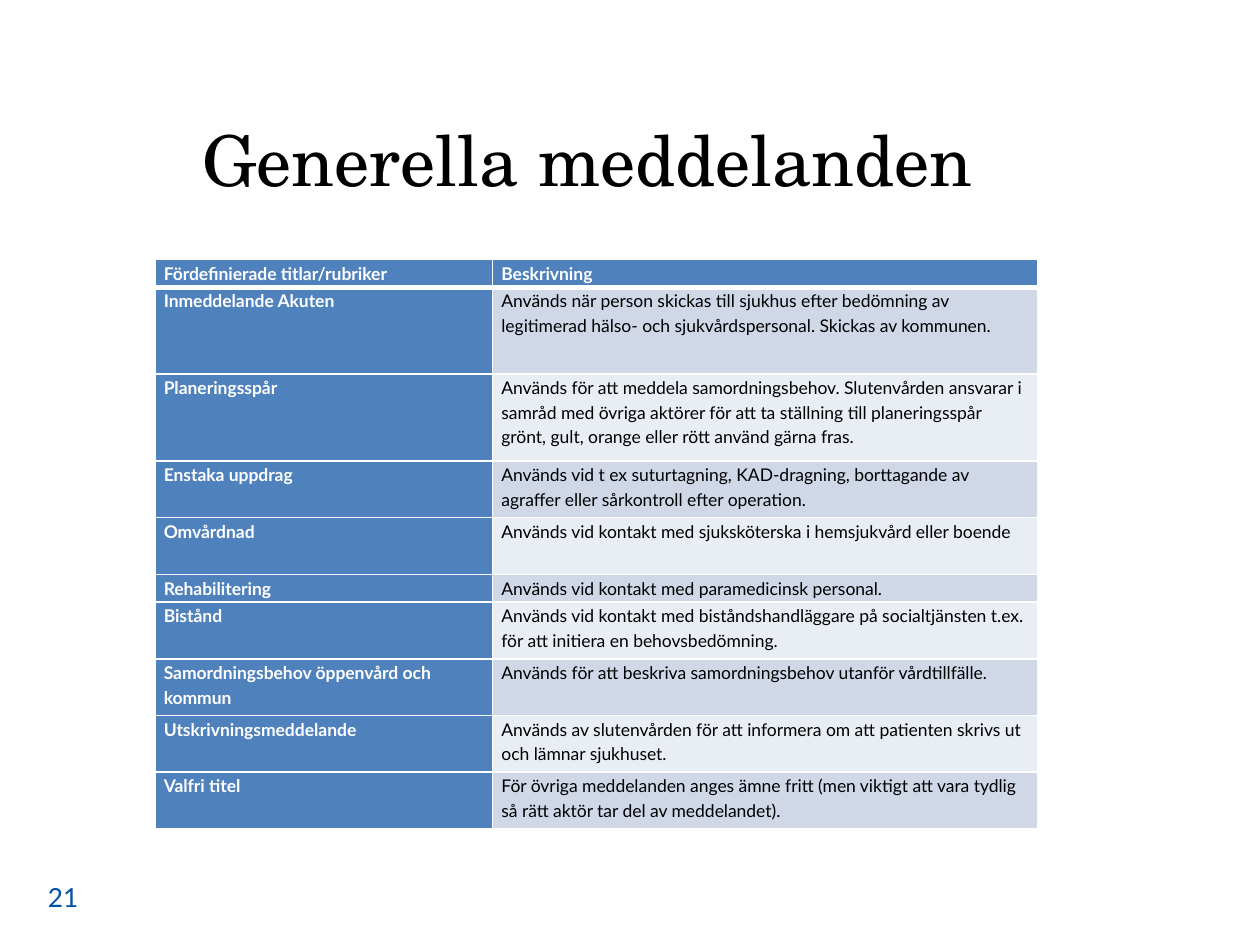
from lxml import etree
from pptx import Presentation
from pptx.dml.color import RGBColor
from pptx.enum.text import MSO_ANCHOR, PP_ALIGN
from pptx.oxml.ns import qn
from pptx.util import Inches, Pt

TOP = MSO_ANCHOR.TOP
MIDDLE = MSO_ANCHOR.MIDDLE
BOTTOM = MSO_ANCHOR.BOTTOM
LEFT = PP_ALIGN.LEFT
RIGHT = PP_ALIGN.RIGHT

HEADER_BLUE = "4F81BD"
BANDS = ["E9EDF4", "D0D8E8"]
WHITE = "FFFFFF"
BLACK = "000000"

ROWS = [
    (0.22, "Fördefinierade titlar/rubriker", "Beskrivning"),
    (0.69, "Inmeddelande Akuten",
     "Används när person skickas till sjukhus efter bedömning av legitimerad "
     "hälso- och sjukvårdspersonal. Skickas av kommunen."),
    (0.69, "Planeringsspår",
     "Används för att meddela samordningsbehov. Slutenvården ansvarar i samråd "
     "med övriga aktörer för att ta ställning till planeringsspår grönt, gult, "
     "orange eller rött använd gärna fras."),
    (0.45, "Enstaka uppdrag",
     "Används vid t ex suturtagning, KAD-dragning, borttagande av agraffer "
     "eller sårkontroll efter operation."),
    (0.45, "Omvårdnad",
     "Används vid kontakt med sjuksköterska i hemsjukvård eller boende"),
    (0.22, "Rehabilitering", "Används vid kontakt med paramedicinsk personal."),
    (0.45, "Bistånd",
     "Används vid kontakt med biståndshandläggare på socialtjänsten t.ex. för "
     "att initiera en behovsbedömning."),
    (0.45, "Samordningsbehov öppenvård och kommun",
     "Används för att beskriva samordningsbehov utanför vårdtillfälle."),
    (0.45, "Utskrivningsmeddelande",
     "Används av slutenvården för att informera om att patienten skrivs ut och "
     "lämnar sjukhuset."),
    (0.45, "Valfri titel",
     "För övriga meddelanden anges ämne fritt (men viktigt att vara tydlig så "
     "rätt aktör tar del av meddelandet)."),
]


def color(value):
    return RGBColor.from_string(value)


def write(frame, text, *, size, hue, font="Lato", bold=False, align=LEFT,
          anchor=TOP, line=None, after=None):
    frame.word_wrap = True
    frame.vertical_anchor = anchor
    paragraph = frame.paragraphs[0]
    paragraph.alignment = align
    paragraph.line_spacing = line
    paragraph.space_after = after
    run = paragraph.add_run()
    run.text = text
    run.font.name = font
    run.font.size = Pt(size)
    run.font.bold = bold
    run.font.color.rgb = color(hue)


presentation = Presentation()
presentation.slide_width = Inches(10)
presentation.slide_height = Inches(7.5)
slide = presentation.slides.add_slide(presentation.slide_layouts[6])

table = slide.shapes.add_table(
    len(ROWS), 2, Inches(1.23), Inches(2.06), Inches(7), Inches(4.54)).table
table.horz_banding = False
table.columns[0].width = Inches(2.68)
table.columns[1].width = Inches(4.33)

for row_index, (height, *texts) in enumerate(ROWS):
    table.rows[row_index].height = Inches(height)
    for column_index, text in enumerate(texts):
        cell = table.cell(row_index, column_index)
        heading = row_index == 0 or column_index == 0
        cell.margin_left = cell.margin_right = Inches(0.07)
        cell.margin_top = cell.margin_bottom = 0
        write(cell.text_frame, text, size=10, hue=WHITE if heading else BLACK,
              bold=heading, line=Pt(14), after=Pt(6))
        properties = cell._tc.get_or_add_tcPr()
        for side in ("lnL", "lnR", "lnT", "lnB"):
            thick = (row_index, side) in [(0, "lnB"), (1, "lnT")]
            border = etree.SubElement(
                properties, qn(f"a:{side}"), w=str(Pt(3 if thick else 1)))
            fill = etree.SubElement(border, qn("a:solidFill"))
            etree.SubElement(fill, qn("a:srgbClr"), val=WHITE)
        cell.fill.solid()
        cell.fill.fore_color.rgb = color(
            HEADER_BLUE if heading else BANDS[row_index % 2])

title = slide.shapes.add_textbox(
    Inches(1.51), Inches(0.57), Inches(7.76), Inches(1.38))
write(title.text_frame, "Generella meddelanden", size=40, hue=BLACK,
      font="TeX Gyre Schola", anchor=MIDDLE)

slide_number = slide.shapes.add_textbox(
    Inches(0.17), Inches(6.89), Inches(0.55), Inches(0.4))
write(slide_number.text_frame, "21", size=15, hue="0050A5", align=RIGHT,
      anchor=BOTTOM)

presentation.save("out.pptx")
